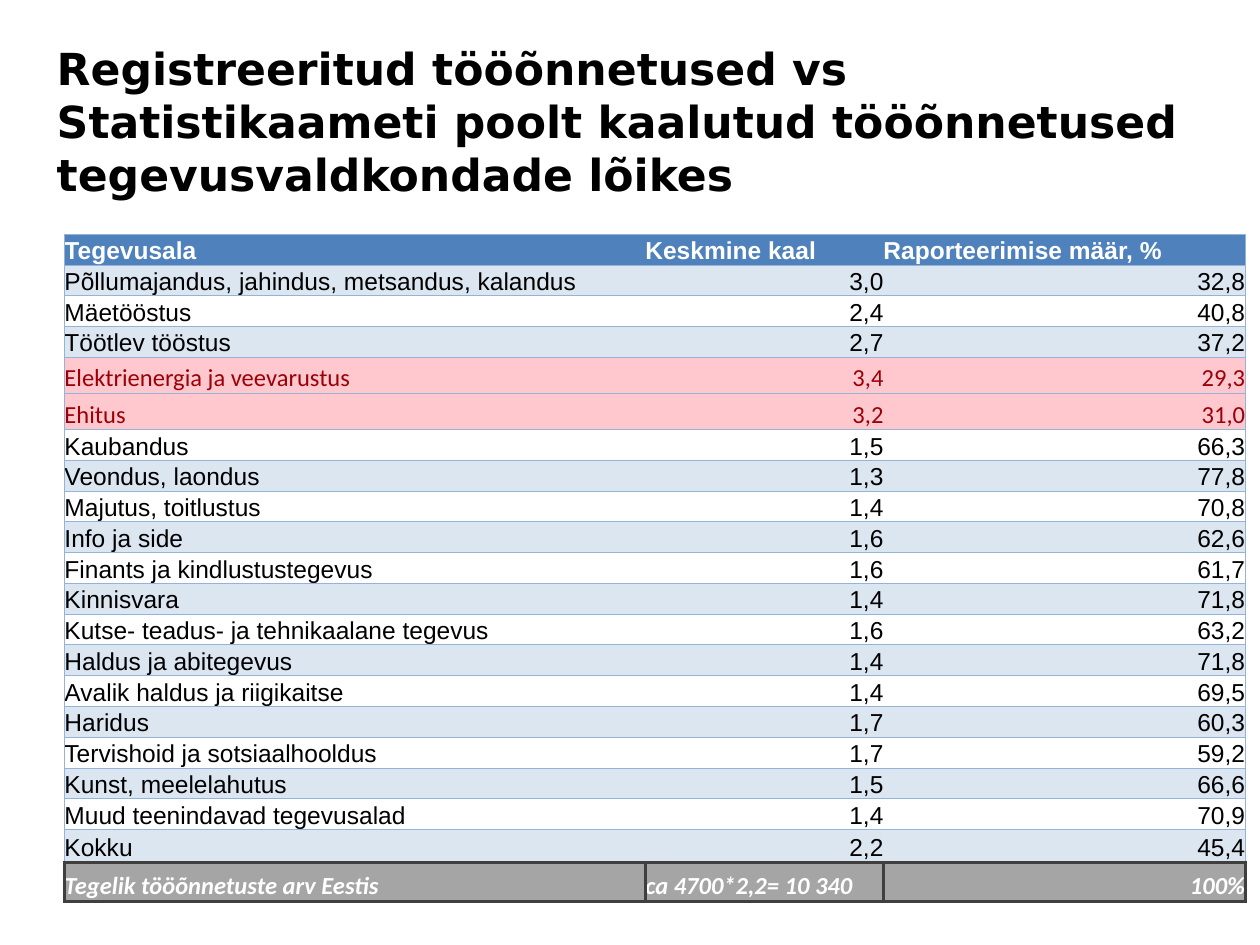
from dataclasses import dataclass
from typing import Optional

from lxml.etree import SubElement
from pptx import Presentation
from pptx.dml.color import RGBColor
from pptx.enum.text import MSO_ANCHOR as Anchor, MSO_AUTO_SIZE as AutoSize, PP_ALIGN as Align
from pptx.oxml.ns import qn
from pptx.util import Cm, Pt


@dataclass(frozen=True)
class Theme:
    """Colours, fonts and type sizes of the slide."""
    black: str = "000000"
    white: str = "FFFFFF"
    header: str = "4F81BD"
    band: str = "DCE6F1"
    alert: str = "FFC7CE"
    alert_text: str = "9C0006"
    total: str = "A5A5A5"
    rule: str = "95B3D7"
    total_rule: str = "3F3F3F"
    title_font: str = "DejaVu Sans"
    body_font: str = "Arial"
    accent_font: str = "Calibri"
    title_size: float = 25.2
    body_size: float = 14
    thin: float = 0.5
    thick: float = 2


THEME = Theme()


@dataclass(frozen=True)
class Border:
    """Colour and width in points of one cell edge."""
    color: str
    width: float


THIN = Border(THEME.rule, THEME.thin)
THICK = Border(THEME.total_rule, THEME.thick)


@dataclass(frozen=True)
class RowStyle:
    """Look shared by the cells of one table row."""
    fill: Optional[str] = None
    color: str = THEME.black
    font: str = THEME.body_font
    bold: bool = False
    italic: bool = False
    height: float = 0.62
    numeric_from: int = 1
    top: Border = THIN
    bottom: Border = THIN
    side: Border = THIN
    divider: Optional[Border] = None


HEADER = RowStyle(THEME.header, THEME.white, bold=True, numeric_from=3)
PLAIN = RowStyle()
BAND = RowStyle(THEME.band)
ALERT = RowStyle(THEME.alert, THEME.alert_text, THEME.accent_font, height=0.73)
SUM = RowStyle(THEME.band, height=0.66, bottom=THICK)
ACTUAL = RowStyle(THEME.total, THEME.white, THEME.accent_font, True, True, 0.79, 2,
                  THICK, THICK, THICK, THICK)


@dataclass(frozen=True)
class Activity:
    """One row: field of activity, mean weight and reporting rate."""
    name: str
    weight: str
    rate: str
    style: Optional[RowStyle] = None


TITLE = ("Registreeritud tööõnnetused vs Statistikaameti poolt kaalutud "
         "tööõnnetused tegevusvaldkondade lõikes")
COLUMN_WIDTHS = (11.71, 4.8, 7.29)
ACTIVITIES = (
    Activity("Tegevusala", "Keskmine kaal", "Raporteerimise määr, %", HEADER),
    Activity("Põllumajandus, jahindus, metsandus, kalandus", "3,0", "32,8"),
    Activity("Mäetööstus", "2,4", "40,8"),
    Activity("Töötlev tööstus", "2,7", "37,2"),
    Activity("Elektrienergia ja veevarustus", "3,4", "29,3", ALERT),
    Activity("Ehitus", "3,2", "31,0", ALERT),
    Activity("Kaubandus", "1,5", "66,3"),
    Activity("Veondus, laondus", "1,3", "77,8"),
    Activity("Majutus, toitlustus", "1,4", "70,8"),
    Activity("Info ja side", "1,6", "62,6"),
    Activity("Finants ja kindlustustegevus", "1,6", "61,7"),
    Activity("Kinnisvara", "1,4", "71,8"),
    Activity("Kutse- teadus- ja tehnikaalane tegevus", "1,6", "63,2"),
    Activity("Haldus ja abitegevus", "1,4", "71,8"),
    Activity("Avalik haldus ja riigikaitse", "1,4", "69,5"),
    Activity("Haridus", "1,7", "60,3"),
    Activity("Tervishoid ja sotsiaalhooldus", "1,7", "59,2"),
    Activity("Kunst, meelelahutus", "1,5", "66,6"),
    Activity("Muud teenindavad tegevusalad", "1,4", "70,9"),
    Activity("Kokku", "2,2", "45,4", SUM),
    Activity("Tegelik tööõnnetuste arv Eestis", "ca 4700*2,2= 10 340", "100%", ACTUAL),
)


def add_run(paragraph, text: str, font: str, size: float, color: str,
            bold: bool, italic: bool = False) -> None:
    """Append one formatted run to a paragraph."""
    run = paragraph.add_run()
    run.text = text
    run.font.name = font
    run.font.size = Pt(size)
    run.font.bold = bold
    run.font.italic = italic
    run.font.color.rgb = RGBColor.from_string(color)


def add_border(cell, tag: str, border: Optional[Border]) -> None:
    """Append one edge to a cell, invisible when no border is given."""
    properties = cell._tc.get_or_add_tcPr()
    line = SubElement(properties, qn(tag))
    if border is None:
        line.set("w", "0")
        SubElement(line, qn("a:noFill"))
        return
    line.set("w", str(Pt(border.width)))
    fill = SubElement(line, qn("a:solidFill"))
    SubElement(fill, qn("a:srgbClr")).set("val", border.color)


def draw_cell(cell, text: str, column: int, style: RowStyle) -> None:
    """Fill, outline and write one table cell."""
    last = len(COLUMN_WIDTHS) - 1
    add_border(cell, "a:lnL", style.side if column == 0 else style.divider)
    add_border(cell, "a:lnR", style.side if column == last else style.divider)
    add_border(cell, "a:lnT", style.top)
    add_border(cell, "a:lnB", style.bottom)
    if style.fill is None:
        cell.fill.background()
    else:
        cell.fill.solid()
        cell.fill.fore_color.rgb = RGBColor.from_string(style.fill)
    cell.margin_left = cell.margin_right = cell.margin_top = cell.margin_bottom = 0
    cell.vertical_anchor = Anchor.BOTTOM
    paragraph = cell.text_frame.paragraphs[0]
    paragraph.alignment = Align.RIGHT if column >= style.numeric_from else Align.LEFT
    add_run(paragraph, text, style.font, THEME.body_size, style.color, style.bold, style.italic)


def draw_title(slide) -> None:
    """Place and write the slide title."""
    title = slide.shapes.title
    title.left, title.top, title.width, title.height = Cm(0.89), Cm(0.76), Cm(23.8), Cm(3.35)
    frame = title.text_frame
    frame.word_wrap = True
    frame.auto_size = AutoSize.NONE
    frame.vertical_anchor = Anchor.MIDDLE
    paragraph = frame.paragraphs[0]
    paragraph.alignment = Align.LEFT
    add_run(paragraph, TITLE, THEME.title_font, THEME.title_size, THEME.black, True)


def draw_table(slide) -> None:
    """Draw the table of activities, banding the rows without their own style."""
    styles = [activity.style or (BAND if index % 2 else PLAIN)
              for index, activity in enumerate(ACTIVITIES)]
    frame = slide.shapes.add_table(
        len(ACTIVITIES), len(COLUMN_WIDTHS), Cm(1.3), Cm(4.72),
        Cm(sum(COLUMN_WIDTHS)), Cm(sum(style.height for style in styles)))
    table = frame.table
    table.first_row = table.horz_banding = False
    for column, width in zip(table.columns, COLUMN_WIDTHS):
        column.width = Cm(width)
    for row, activity, style in zip(table.rows, ACTIVITIES, styles):
        row.height = Cm(style.height)
        texts = (activity.name, activity.weight, activity.rate)
        for column, (cell, text) in enumerate(zip(row.cells, texts)):
            draw_cell(cell, text, column, style)


def main() -> None:
    """Build and save the presentation."""
    presentation = Presentation()
    presentation.slide_width, presentation.slide_height = Cm(25.4), Cm(19.05)
    slide = presentation.slides.add_slide(presentation.slide_layouts[5])
    draw_title(slide)
    draw_table(slide)
    presentation.save("out.pptx")


if __name__ == "__main__":
    main()
